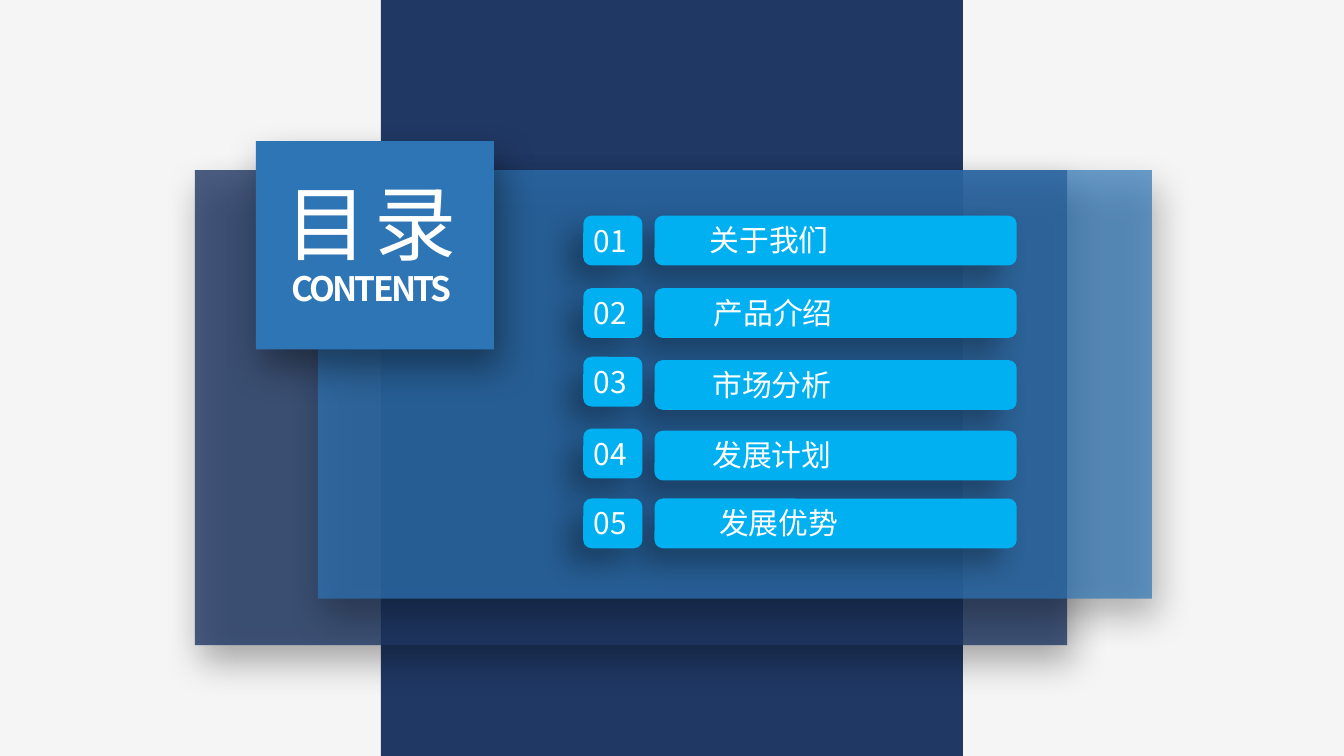
from typing import NamedTuple

from lxml.etree import SubElement
from pptx import Presentation
from pptx.dml.color import RGBColor
from pptx.enum.shapes import MSO_SHAPE as Preset
from pptx.enum.text import MSO_AUTO_SIZE as AutoSize, PP_ALIGN as Align
from pptx.oxml.ns import qn
from pptx.util import Inches, Pt

COLORS = {
    "background": "F5F5F5",
    "navy": "203864",
    "blue": "2E75B6",
    "cyan": "00B0F0",
    "white": "FFFFFF",
    "black": "000000",
}
FONT = "Noto Sans CJK SC"
CELL = 0.1
COLUMNS, ROWS = 100, 56.25
PANEL_SHADOW = {"alpha": 40, "blur": 20, "distance": 10, "angle": 70}
ITEM_SHADOW = {"alpha": 30, "blur": 15, "distance": 12, "angle": 135}
ENTRIES = [
    ("关于我们", 0, 0, 2.8),
    ("产品介绍", 5.4, 5.4, 3.1),
    ("市场分析", 10.5, 10.75, 3),
    ("发展计划", 15.85, 16, 3),
    ("发展优势", 21.05, 21.05, 3.5),
]


class Box(NamedTuple):
    left: float
    top: float
    width: float
    height: float

    def inner(self, left, top, width, height):
        return Box(self.left + left, self.top + top, width, height)

    def lengths(self):
        return [Inches(value * CELL) for value in self]


def color_of(name):
    return RGBColor.from_string(COLORS[name])


def add_color(parent, name, alpha):
    color = SubElement(parent, qn("a:srgbClr"), val=COLORS[name])
    SubElement(color, qn("a:alpha"), val=str(alpha * 1000))


def add_panel(slide, box, color, preset=Preset.RECTANGLE, alpha=100, shadow=None):
    shape = slide.shapes.add_shape(preset, *box.lengths())
    shape.fill.solid()
    shape.fill.fore_color.rgb = color_of(color)
    shape.line.fill.background()
    shape.shadow.inherit = False
    properties = shape.element.spPr
    if alpha < 100:
        solid = properties.find(qn("a:solidFill"))
        solid.clear()
        add_color(solid, color, alpha)
    if shadow:
        outer = SubElement(
            properties.find(qn("a:effectLst")), qn("a:outerShdw"),
            blurRad=str(Pt(shadow["blur"])), dist=str(Pt(shadow["distance"])),
            dir=str(shadow["angle"] * 60000), rotWithShape="0",
        )
        add_color(outer, "black", shadow["alpha"])


def add_text(slide, box, text, size=16, bold=False, align=Align.LEFT,
             spacing=0, wrap=False, insets=(0.1, 0.05)):
    frame = slide.shapes.add_textbox(*box.lengths()).text_frame
    frame.word_wrap = wrap
    frame.auto_size = AutoSize.SHAPE_TO_FIT_TEXT
    frame.margin_left = frame.margin_right = Inches(insets[0])
    frame.margin_top = frame.margin_bottom = Inches(insets[1])
    paragraph = frame.paragraphs[0]
    paragraph.alignment = align
    run = paragraph.add_run()
    run.text = text
    run.font.size = Pt(size)
    run.font.bold = bold
    run.font.color.rgb = color_of("white")
    run.font.name = FONT
    properties = run.font._element
    SubElement(properties, qn("a:ea"), typeface=FONT)
    if spacing:
        properties.set("spc", str(int(spacing * 100)))


def add_backdrop(slide, box):
    slide.background.fill.solid()
    slide.background.fill.fore_color.rgb = color_of("background")
    add_panel(slide, box.inner(28.35, 0, 43.3, box.height), "navy")
    add_panel(slide, box.inner(14.5, 12.65, 64.9, 35.35), "navy",
              alpha=80, shadow=PANEL_SHADOW)
    add_panel(slide, box.inner(23.65, 12.65, 62.05, 31.9), "blue",
              alpha=70, shadow=PANEL_SHADOW)


def add_title(slide, box):
    add_panel(slide, box, "blue", shadow=PANEL_SHADOW)
    title_format = {"align": Align.CENTER, "insets": (0.07, 0.04)}
    add_text(slide, box.inner(1.35, 1.95, 14.4, 8.2), "目 录",
             size=44, spacing=-3, **title_format)
    add_text(slide, box.inner(1.6, 9, 14, 3.8), "CONTENTS",
             size=18, bold=True, spacing=-1.5, **title_format)


def add_label(slide, box, text, indent):
    add_panel(slide, box, "cyan", preset=Preset.ROUNDED_RECTANGLE,
              shadow=ITEM_SHADOW)
    add_text(slide, box.inner(indent, -0.25, 19.5, 4), text,
             wrap=True, insets=(0.13, 0.07))


def add_number(slide, box, number):
    add_panel(slide, box, "cyan", preset=Preset.ROUNDED_RECTANGLE,
              shadow=ITEM_SHADOW)
    add_text(slide, box.inner(-0.2, 0, 4.6, box.height), f"{number:02d}")


def add_contents(slide, box):
    number_width, gap, row_height = 4.4, 0.9, 3.7
    label_left = number_width + gap
    label_width = box.width - label_left
    for text, _, top, indent in ENTRIES:
        add_label(slide, box.inner(label_left, top, label_width, row_height),
                  text, indent)
    for number, (_, top, _, _) in enumerate(ENTRIES, 1):
        add_number(slide, box.inner(0, top, number_width, row_height), number)


def main():
    presentation = Presentation()
    presentation.slide_width = Inches(COLUMNS * CELL)
    presentation.slide_height = Inches(ROWS * CELL)
    slide = presentation.slides.add_slide(presentation.slide_layouts[6])
    page = Box(0, 0, COLUMNS, ROWS)
    add_backdrop(slide, page)
    add_title(slide, page.inner(19.05, 10.5, 17.7, 15.5))
    add_contents(slide, page.inner(43.4, 16.05, 32.25, 24.75))
    presentation.save("out.pptx")


if __name__ == "__main__":
    main()
